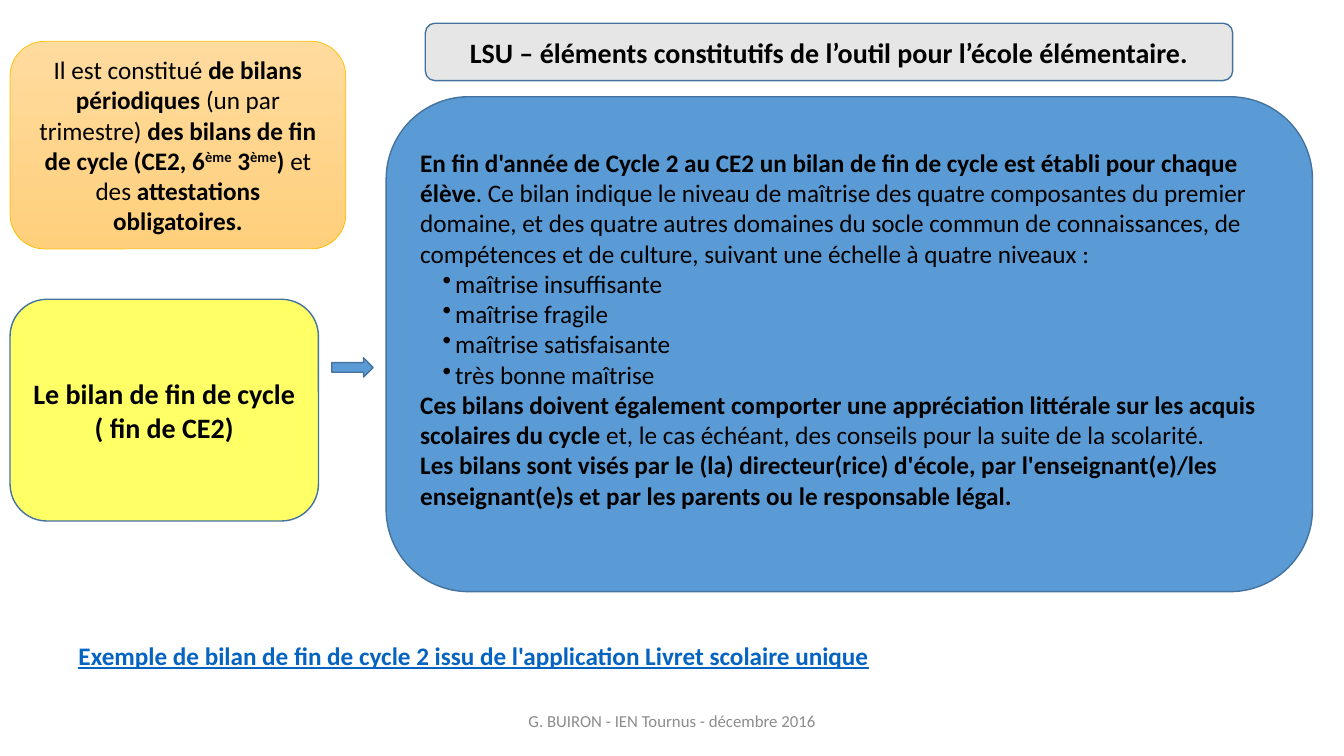
from lxml.etree import SubElement
from pptx import Presentation
from pptx.dml.color import RGBColor
from pptx.enum.shapes import MSO_SHAPE
from pptx.enum.text import MSO_ANCHOR, PP_ALIGN
from pptx.oxml.ns import qn
from pptx.util import Pt

BLACK = RGBColor(0x00, 0x00, 0x00)
GRAY = RGBColor(0x8C, 0x8C, 0x8C)
LIGHT_GRAY = RGBColor(0xE7, 0xE6, 0xE6)
BLUE = RGBColor(0x5B, 0x9B, 0xD5)
DARK_BLUE = RGBColor(0x43, 0x73, 0x9E)
LINK_BLUE = RGBColor(0x05, 0x63, 0xC1)
YELLOW = RGBColor(0xFF, 0xFF, 0x66)
GOLD = RGBColor(0xFF, 0xC0, 0x00)
PALE_ORANGE = RGBColor(0xFF, 0xDB, 0x9E)
ORANGE = RGBColor(0xFF, 0xD0, 0x7C)

LEVELS = ["maîtrise insuffisante", "maîtrise fragile", "maîtrise satisfaisante", "très bonne maîtrise"]


def set_bullet(paragraph, margin=25, hanging=9):
    """Give a paragraph a round bullet with a hanging indent."""
    properties = paragraph._p.get_or_add_pPr()
    properties.set("marL", str(Pt(margin)))
    properties.set("indent", str(-Pt(hanging)))
    SubElement(properties, qn("a:buChar")).set("char", "•")


def write_text(shape, paragraphs, size=18, color=BLACK, align=PP_ALIGN.CENTER,
               anchor=MSO_ANCHOR.MIDDLE, underline=False, bottom=3.6):
    """Write paragraphs of (text, style) runs: b bold, s superscript, * bullet."""
    frame = shape.text_frame
    frame.word_wrap = True
    frame.vertical_anchor = anchor
    frame.margin_bottom = Pt(bottom)
    for index, runs in enumerate(paragraphs):
        paragraph = frame.add_paragraph() if index else frame.paragraphs[0]
        paragraph.alignment = align
        for text, style in runs:
            run = paragraph.add_run()
            run.text = text
            run.font.name = "Calibri"
            run.font.size = Pt(size)
            run.font.bold = "b" in style
            run.font.underline = underline
            run.font.color.rgb = color
            if "s" in style:
                run._r.get_or_add_rPr().set("baseline", "30000")
            if "*" in style:
                set_bullet(paragraph)


def add_block(slide, box, fill, line=DARK_BLUE, width=1, kind=MSO_SHAPE.ROUNDED_RECTANGLE):
    """Add an outlined shape filled with a colour or a pair of gradient colours."""
    shape = slide.shapes.add_shape(kind, *map(Pt, box))
    shape.shadow.inherit = False
    if isinstance(fill, list):
        shape.fill.gradient()
        shape.fill.gradient_angle = 270
        for stop, color in zip(shape.fill.gradient_stops, fill):
            stop.color.rgb = color
    else:
        shape.fill.solid()
        shape.fill.fore_color.rgb = fill
    shape.line.color.rgb = line
    shape.line.width = Pt(width)
    return shape


def add_title(slide, box):
    """Add the title bar."""
    write_text(add_block(slide, box, LIGHT_GRAY), [
        [("LSU – éléments constitutifs de l’outil pour l’école élémentaire.", "b")]], size=20)


def add_summary(slide, box):
    """Add the orange box that lists what the record contains."""
    shape = add_block(slide, box, [PALE_ORANGE, ORANGE], line=GOLD, width=0.5)
    write_text(shape, [[
        ("Il est constitué ", ""), ("de bilans périodiques ", "b"), ("(un par trimestre) ", ""),
        ("des bilans de fin de cycle (CE2, 6", "b"), ("ème", "bs"), (" 3", "b"), ("ème", "bs"),
        (") ", "b"), ("et des ", ""), ("attestations obligatoires.", "b")]])


def add_topic(slide, box):
    """Add the yellow topic box and the arrow to its right."""
    left, top, width, height = box
    write_text(add_block(slide, box, YELLOW), [
        [("Le bilan de fin de cycle", "b")], [("( fin de CE2)", "b")]], size=20)
    arrow_box = (left + width + 9.5, top + 41.8, 29.5, 13.7)
    add_block(slide, arrow_box, BLUE, kind=MSO_SHAPE.RIGHT_ARROW)


def add_details(slide, box):
    """Add the blue box that explains the end-of-cycle report."""
    intro = [
        ("En fin d'année de Cycle 2 au CE2 un bilan de fin de cycle est établi pour chaque élève", "b"),
        (". Ce bilan indique le niveau de maîtrise des quatre composantes du premier domaine, et des "
         "quatre autres domaines du socle commun de connaissances, de compétences et de culture, "
         "suivant une échelle à quatre niveaux :", "")]
    levels = [[(level, "*")] for level in LEVELS]
    comments = [
        ("Ces bilans doivent également comporter une appréciation littérale sur les acquis "
         "scolaires du cycle", "b"),
        (" et, le cas échéant, des conseils pour la suite de la scolarité.", "")]
    signatures = [
        ("Les bilans sont visés par le (la) directeur(rice) d'école, par l'enseignant(e)/les "
         "enseignant(e)s et par les parents ou le responsable légal.", "b")]
    write_text(add_block(slide, box, BLUE), [intro, *levels, comments, signatures],
               align=PP_ALIGN.LEFT, bottom=25.6)


def add_example(slide, box):
    """Add the underlined reference to an example."""
    write_text(slide.shapes.add_textbox(*map(Pt, box)), [
        [("Exemple de bilan de fin de cycle 2 issu de l'application Livret scolaire unique", "b")]],
        color=LINK_BLUE, align=PP_ALIGN.LEFT, anchor=MSO_ANCHOR.TOP, underline=True)


def add_footer(slide, box):
    """Add the footer line."""
    write_text(slide.shapes.add_textbox(*map(Pt, box)), [
        [("G. BUIRON - IEN Tournus - décembre 2016", "")]], size=12, color=GRAY)


def main():
    """Build the slide and save it."""
    presentation = Presentation()
    presentation.slide_width, presentation.slide_height = Pt(960), Pt(540)
    slide = presentation.slides.add_slide(presentation.slide_layouts[6])
    add_title(slide, (303.8, 16.6, 576.7, 41))
    add_summary(slide, (7.2, 29.5, 239.8, 148.3))
    add_footer(slide, (318.2, 500.4, 324, 28.8))
    add_details(slide, (275.8, 69.1, 661.7, 353.5))
    add_topic(slide, (7.2, 213.8, 220.3, 158.4))
    add_example(slide, (49, 453.6, 593.3, 28.8))
    presentation.save("out.pptx")


if __name__ == "__main__":
    main()
